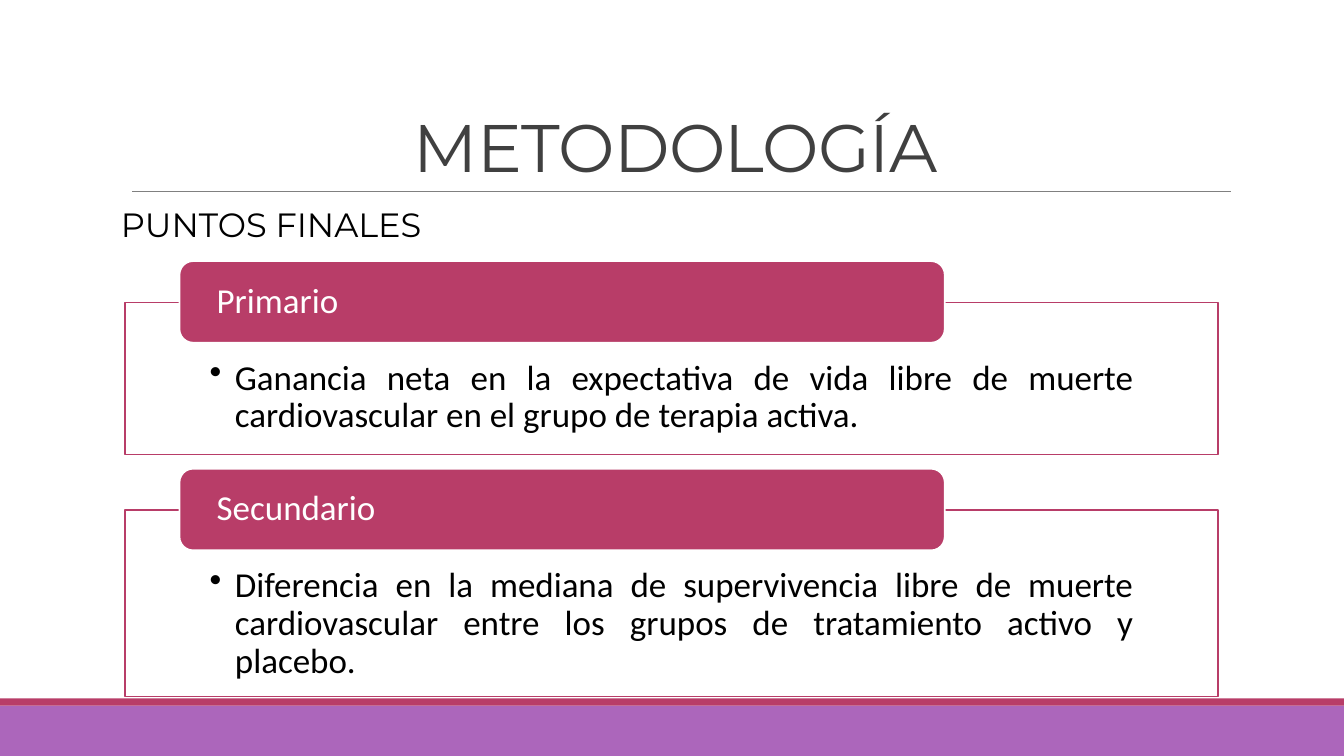
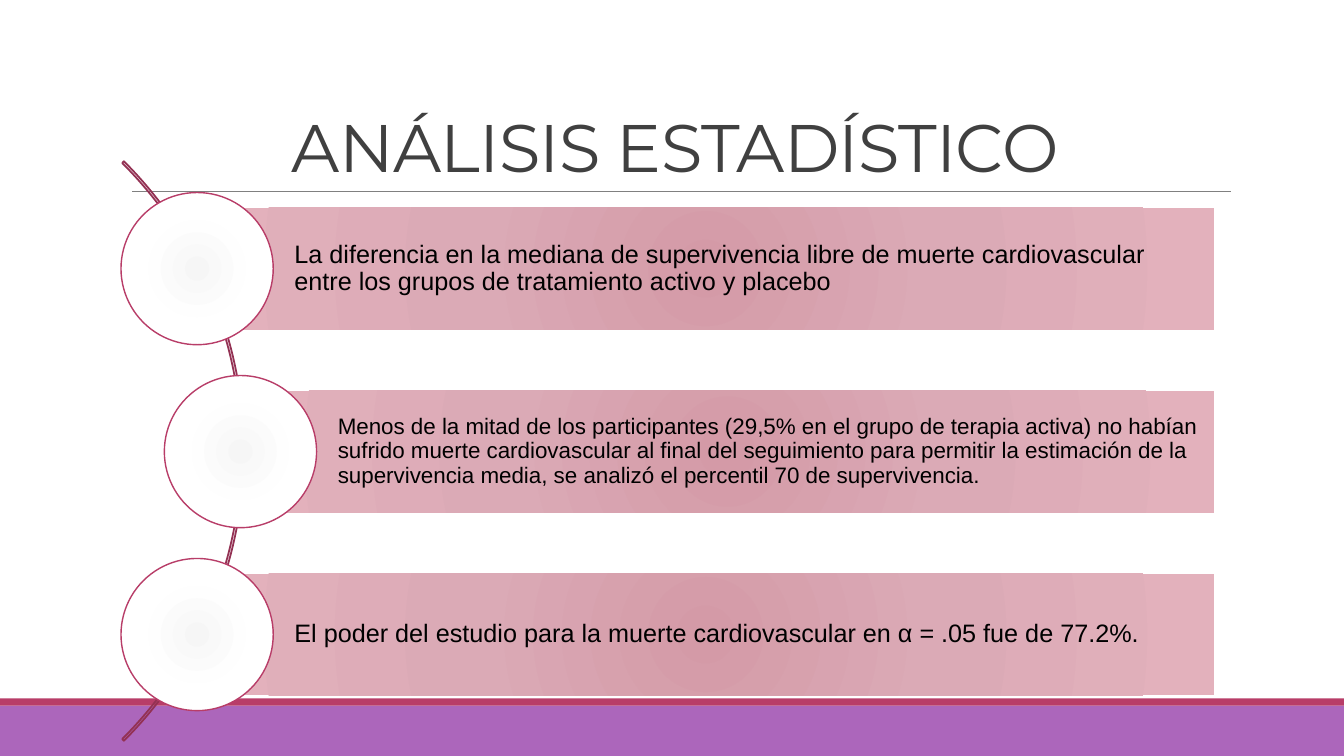
from typing import NamedTuple

from pptx import Presentation
from pptx.dml.color import RGBColor
from pptx.enum.shapes import MSO_CONNECTOR as Link, MSO_SHAPE as Form
from pptx.enum.text import MSO_ANCHOR as Anchor, MSO_AUTO_SIZE as Fit, PP_ALIGN as Align
from pptx.oxml import parse_xml
from pptx.oxml.ns import nsdecls, qn
from pptx.util import Inches, Pt

HUES = {
    "band": "AC66BB",
    "rose": "B83D68",
    "arc": "933153",
    "rule": "808080",
    "title": "404040",
    "black": "000000",
    "white": "FFFFFF",
}
BAR_FADE = ((0, "D49AA7"), (45, "DBAAB6"), (100, "E3B1BC"))
DISC_FADE = ((0, "F6F6F6"), (45, "FEFEFE"), (100, "FFFFFF"))


class Box(NamedTuple):
    left: float
    top: float
    width: float
    height: float


class Font(NamedTuple):
    name: str
    size: float
    hue: str


class Goal(NamedTuple):
    head: str
    text: str
    top: float
    height: float


class Point(NamedTuple):
    text: str
    left: float
    size: float
    pad: float


GOALS = (
    Goal("Primario", "Ganancia neta en la expectativa de vida libre de muerte "
         "cardiovascular en el grupo de terapia activa.", 3, 1.51),
    Goal("Secundario", "Diferencia en la mediana de supervivencia libre de muerte "
         "cardiovascular entre los grupos de tratamiento activo y placebo.", 5.06, 1.85),
)
POINTS = (
    Point("La diferencia en la mediana de supervivencia libre de muerte "
          "cardiovascular entre los grupos de tratamiento activo y placebo", 1.96, 18, 0.05),
    Point("Menos de la mitad de los participantes (29,5% en el grupo de terapia "
          "activa) no habían sufrido muerte cardiovascular al final del seguimiento "
          "para permitir la estimación de la supervivencia media, se analizó el "
          "percentil 70 de supervivencia.", 2.39, 16, 0.04),
    Point("El poder del estudio para la muerte cardiovascular en α = .05 fue de 77.2%.",
          1.96, 18, 0.05),
)


def tint(hue: str) -> RGBColor:
    return RGBColor.from_string(HUES[hue])


def place(shape, box: Box) -> None:
    shape.left, shape.top, shape.width, shape.height = map(Inches, box)


def draw(slide, form, box: Box, fill=None, line=None, weight: float = 1.25):
    shape = slide.shapes.add_shape(form, *map(Inches, box))
    shape.shadow.inherit = False
    if fill:
        shape.fill.solid()
        shape.fill.fore_color.rgb = tint(fill)
    else:
        shape.fill.background()
    if line:
        shape.line.color.rgb = tint(line)
        shape.line.width = Pt(weight)
    else:
        shape.line.fill.background()
    return shape


def fade(shape, stops) -> None:
    marks = "".join(
        f'<a:gs pos="{spot * 1000}"><a:srgbClr val="{hue}"/></a:gs>' for spot, hue in stops
    )
    edge = 'l="100000" t="100000" r="100000" b="100000"'
    grad = parse_xml(
        f'<a:gradFill {nsdecls("a")} rotWithShape="1"><a:gsLst>{marks}</a:gsLst>'
        f'<a:path path="circle"><a:fillToRect {edge}/></a:path></a:gradFill>'
    )
    props = shape.element.spPr
    props.replace(props.find(qn("a:noFill")), grad)


def write(shape, text: str, font: Font, align=Align.LEFT, anchor=Anchor.MIDDLE,
          inset=(0.1, 0.05, 0.1, 0.05), space: float = 0.9):
    frame = shape.text_frame
    frame.word_wrap = True
    frame.auto_size = Fit.NONE
    frame.vertical_anchor = anchor
    (frame.margin_left, frame.margin_top,
     frame.margin_right, frame.margin_bottom) = map(Inches, inset)
    para = frame.paragraphs[0]
    para.alignment = align
    para.line_spacing = space
    para.space_before = Pt(0)
    run = para.add_run()
    run.text = text
    run.font.name = font.name
    run.font.size = Pt(font.size)
    run.font.color.rgb = tint(font.hue)
    return para


def mark(para, sign: str = "", indent: float = 0) -> None:
    props = para._p.get_or_add_pPr()
    props.set("marL", str(Inches(indent)))
    props.set("indent", str(-Inches(indent)))
    tag = f'buChar {nsdecls("a")} char="{sign}"' if sign else f'buNone {nsdecls("a")}'
    props.append(parse_xml(f"<a:{tag}/>"))


def dress(deck, slide) -> None:
    band = draw(slide, Form.RECTANGLE, Box(0, 7, 13.33, 0.5), "band")
    strip = draw(slide, Form.RECTANGLE, Box(0, 6.93, 13.33, 0.07), "rose")
    rule = slide.shapes.add_connector(Link.STRAIGHT, *map(Inches, (1.31, 1.9, 12.21, 1.9)))
    rule.line.color.rgb = tint("rule")
    rule.line.width = Pt(0.5)
    rule.element.spPr.append(parse_xml(f'<a:effectLst {nsdecls("a")}/>'))
    for part in (band, strip, rule):
        deck.slide_master.shapes.element.append(part.element)


def start(deck, index: int, text: str):
    slide = deck.slides.add_slide(deck.slide_layouts[index])
    title = slide.shapes.title
    place(title, Box(1.2, 0.31, 11, 1.59))
    para = write(title, text, Font("Montserrat", 48, "title"), Align.CENTER,
                 Anchor.BOTTOM, space=0.85)
    para.runs[0].font._element.set("spc", "-50")
    return slide


def add_goal(slide, goal: Goal) -> None:
    panel = draw(slide, Form.RECTANGLE, Box(1.24, goal.top, 10.84, goal.height),
                 "white", "rose")
    para = write(panel, goal.text, Font("Calibri", 25, "black"), Align.JUSTIFY,
                 Anchor.TOP, (0.84, 0.57, 0.84, 0.19))
    mark(para, "•", 0.25)
    head = draw(slide, Form.ROUNDED_RECTANGLE, Box(1.78, goal.top - 0.41, 7.59, 0.81),
                "rose", "white")
    write(head, goal.head, Font("Calibri", 25, "white"), Align.JUSTIFY,
          inset=(0.33, 0.04, 0.33, 0.04))


def add_point(slide, point: Point, top: float) -> None:
    bar = draw(slide, Form.RECTANGLE, Box(point.left, top, 12.04 - point.left, 1.21))
    fade(bar, BAR_FADE)
    pad = point.pad
    write(bar, point.text, Font("Arial", point.size, "black"), inset=(0.96, pad, pad, pad))
    disc = draw(slide, Form.OVAL, Box(point.left - 0.76, top - 0.15, 1.51, 1.51),
                line="rose", weight=1)
    fade(disc, DISC_FADE)


def add_method(deck) -> None:
    slide = start(deck, 1, "METODOLOGÍA")
    dress(deck, slide)
    body = slide.placeholders[1]
    place(body, Box(1.2, 2.02, 11, 4.4))
    para = write(body, "PUNTOS FINALES", Font("Montserrat", 24, "black"),
                 anchor=Anchor.TOP, inset=(0, 0.05, 0, 0.05))
    mark(para)
    for goal in GOALS:
        add_goal(slide, goal)


def add_stats(deck) -> None:
    slide = start(deck, 5, "ANÁLISIS ESTADÍSTICO")
    arc = draw(slide, Form.BLOCK_ARC, Box(-5.71, 0.41, 8.13, 8.13), line="arc")
    for index, value in enumerate((189, 27, 0.003)):
        arc.adjustments[index] = value
    for index, point in enumerate(POINTS):
        add_point(slide, point, 2.06 + index * 3.63 / 2)


def main() -> None:
    deck = Presentation()
    deck.slide_width = Inches(13.33)
    deck.slide_height = Inches(7.5)
    add_method(deck)
    add_stats(deck)
    deck.save("out.pptx")


if __name__ == "__main__":
    main()
